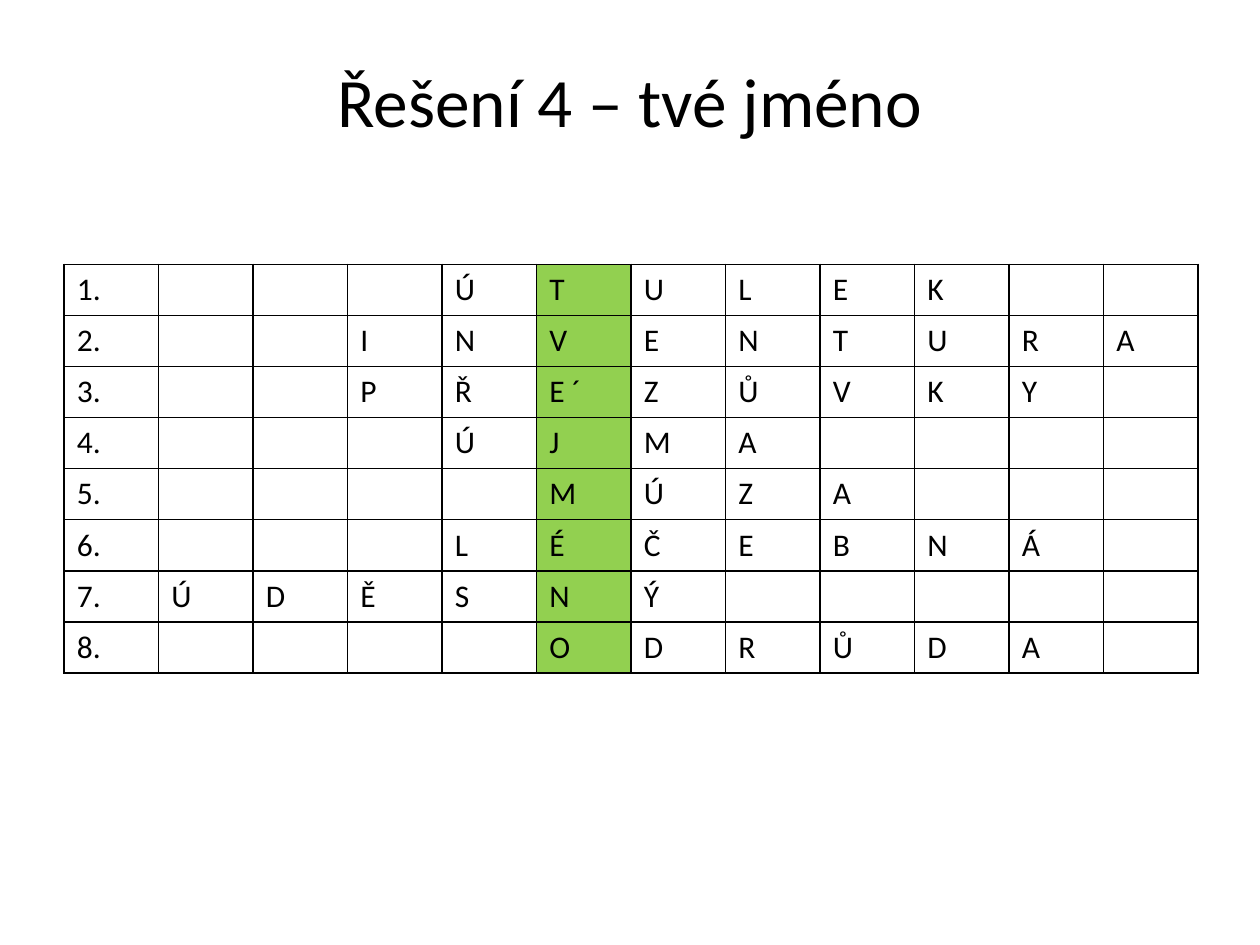
"""Build a crossword solution slide with its highlighted answer column."""
from lxml import etree
from pptx import Presentation
from pptx.dml.color import RGBColor
from pptx.enum import text
from pptx.oxml import ns
from pptx.util import Pt

TITLE = "Řešení 4 – tvé jméno"
WORDS = [
    (4, ["Ú", "T", "U", "L", "E", "K"]),
    (3, ["I", "N", "V", "E", "N", "T", "U", "R", "A"]),
    (3, ["P", "Ř", "E ´", "Z", "Ů", "V", "K", "Y"]),
    (4, ["Ú", "J", "M", "A"]),
    (5, ["M", "Ú", "Z", "A"]),
    (4, ["L", "É", "Č", "E", "B", "N", "Á"]),
    (1, ["Ú", "D", "Ě", "S", "N", "Ý"]),
    (5, ["O", "D", "R", "Ů", "D", "A"]),
]
COLUMNS, ANSWER_COLUMN = 12, 5
CELL_WIDTH, CELL_HEIGHT = 54, 29.2
THEME = {
    "font": "Calibri",
    "ink": "000000",
    "answer": "92D050",
    "title_size": 39.6,
    "cell_size": 18,
    "border": 1,
}


def write(frame, content, size, align=text.PP_ALIGN.LEFT):
    """Put one formatted paragraph in a text frame."""
    paragraph = frame.paragraphs[0]
    paragraph.alignment = align
    paragraph.font.size = Pt(size)
    if content:
        run = paragraph.add_run()
        run.text = content
        run.font.name = THEME["font"]
        run.font.size = Pt(size)
        run.font.color.rgb = RGBColor.from_string(THEME["ink"])


def add_borders(cell):
    """Outline all four sides of a cell."""
    properties = cell._tc.get_or_add_tcPr()
    for index, side in enumerate(("lnL", "lnR", "lnT", "lnB")):
        line = etree.Element(ns.qn(f"a:{side}"), w=str(Pt(THEME["border"])))
        fill = etree.SubElement(line, ns.qn("a:solidFill"))
        etree.SubElement(fill, ns.qn("a:srgbClr"), val=THEME["ink"])
        properties.insert(index, line)


def add_title(slide):
    """Add the centred heading."""
    frame = slide.shapes.add_textbox(Pt(36), Pt(31.7), Pt(648), Pt(51)).text_frame
    frame.word_wrap = True
    frame.vertical_anchor = text.MSO_ANCHOR.MIDDLE
    write(frame, TITLE, THEME["title_size"], text.PP_ALIGN.CENTER)


def add_crossword(slide):
    """Add the numbered grid of words."""
    table = slide.shapes.add_table(
        len(WORDS), COLUMNS, Pt(36.7), Pt(151),
        Pt(COLUMNS * CELL_WIDTH), Pt(len(WORDS) * CELL_HEIGHT),
    ).table
    table.first_row = table.horz_banding = False
    for row, (start, letters) in enumerate(WORDS):
        table.rows[row].height = Pt(CELL_HEIGHT)
        entries = {0: f"{row + 1}.", **dict(enumerate(letters, start))}
        for column in range(COLUMNS):
            cell = table.cell(row, column)
            if column == ANSWER_COLUMN:
                cell.fill.solid()
                cell.fill.fore_color.rgb = RGBColor.from_string(THEME["answer"])
            else:
                cell.fill.background()
            add_borders(cell)
            write(cell.text_frame, entries.get(column, ""), THEME["cell_size"])


def main():
    """Create and save the presentation."""
    presentation = Presentation()
    presentation.slide_width, presentation.slide_height = Pt(720), Pt(540)
    slide = presentation.slides.add_slide(presentation.slide_layouts[6])
    add_title(slide)
    add_crossword(slide)
    presentation.save("out.pptx")


if __name__ == "__main__":
    main()
